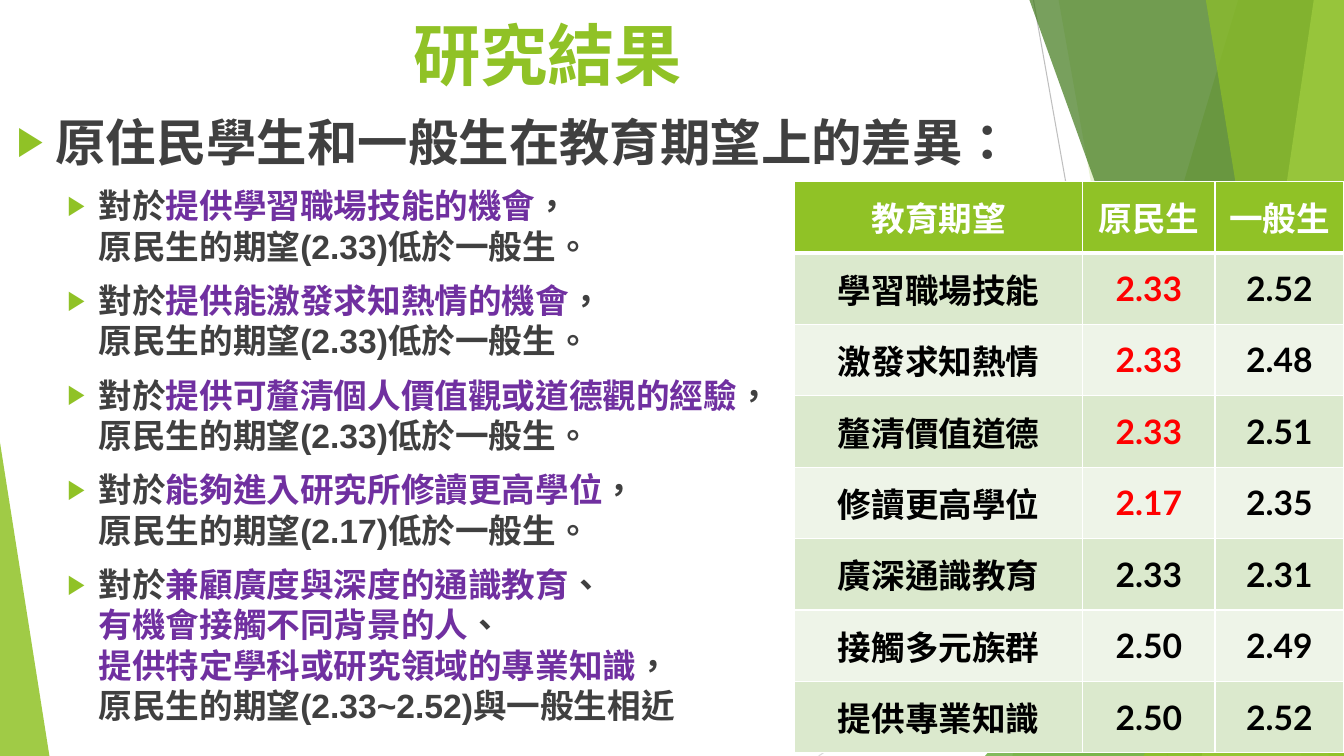
from lxml import etree
from pptx import Presentation, util as u
from pptx.dml.color import RGBColor
from pptx.enum import lang, shapes, text
from pptx.oxml.ns import qn

GREEN, DARK, PURPLE, WHITE = "90C226", "404040", "7030A0", "FFFFFF"


def add_xml(parent, tag, **attributes):
    return etree.SubElement(parent, qn(tag), attributes)


def style_run(run, size, latin, color):
    font = run.font
    font.size, font.bold, font.name = u.Pt(size), True, latin
    font.color.rgb = RGBColor.from_string(color)
    font.language_id = lang.MSO_LANGUAGE_ID.TRADITIONAL_CHINESE
    add_xml(font._element, "a:ea", typeface="Noto Sans CJK SC")


prs = Presentation()
prs.slide_width, prs.slide_height = u.Inches(13.33), u.Inches(7.5)
slide = prs.slides.add_slide(prs.slide_layouts[5])

# Thin diagonal lines behind the facets
for x1, y1, x2, y2, color in [(10.25, 0, 11.58, 7.5, "BFBFBF"),
                              (13.33, 4.03, 8.12, 7.5, "D9D9D9")]:
    diagonal = slide.shapes.add_connector(
        shapes.MSO_CONNECTOR.STRAIGHT,
        u.Inches(x1), u.Inches(y1), u.Inches(x2), u.Inches(y2))
    diagonal.line.color.rgb = RGBColor.from_string(color)
    diagonal.line.width = u.Pt(0.75)
    add_xml(diagonal._element.spPr, "a:effectLst")

# Green facets: bands give top and bottom x of their left edge,
# triangles give left, top, width, height and the tip position
facets = [
    ((12.28, 10.04), GREEN, 30),
    ((10.5, 11.83), GREEN, 20),
    ((9.77, 3.33, 3.56, 4.17, 1), "54A021", 72),
    ((10.21, 12.91), "3F7819", 70),
    ((13.03, 11.92), "C0E474", 70),
    ((11.96, 13.18), GREEN, 65),
    ((11.34, 3.93, 1.99, 3.57, 1), GREEN, 80),
    ((0, 4.39, 0.49, 3.11, 0), GREEN, 85),
]
for geometry, color, opacity in facets:
    if len(geometry) == 2:
        top_x, bottom_x = map(u.Inches, geometry)
        band = slide.shapes.build_freeform(top_x, 0)
        band.add_line_segments([(prs.slide_width, 0),
                                (prs.slide_width, prs.slide_height),
                                (bottom_x, prs.slide_height)], close=True)
        facet = band.convert_to_shape()
    else:
        *box, tip = geometry
        facet = slide.shapes.add_shape(
            shapes.MSO_SHAPE.ISOSCELES_TRIANGLE, *map(u.Inches, box))
        facet.adjustments[0] = tip
    facet.shadow.inherit = False
    facet.line.fill.background()
    facet.fill.solid()
    facet.fill.fore_color.rgb = RGBColor.from_string(color)
    tint = facet._element.spPr.find(".//" + qn("a:srgbClr"))
    add_xml(tint, "a:alpha", val=str(opacity * 1000))

# Title
title = slide.shapes.title
title.left, title.top = u.Inches(0.73), u.Inches(0.03)
title.width, title.height = u.Inches(9.4), u.Inches(1)
title.text_frame.text = "研究結果"
title.text_frame.vertical_anchor = text.MSO_ANCHOR.MIDDLE
title.text_frame.paragraphs[0].alignment = text.PP_ALIGN.CENTER
style_run(title.text_frame.paragraphs[0].runs[0], 48, "Noto Sans CJK SC", GREEN)

# Table of expectations
scores = [
    ("教育期望", "原民生", "一般生"),
    ("學習職場技能", "2.33", "2.52"),
    ("激發求知熱情", "2.33", "2.48"),
    ("釐清價值道德", "2.33", "2.51"),
    ("修讀更高學位", "2.17", "2.35"),
    ("廣深通識教育", "2.33", "2.31"),
    ("接觸多元族群", "2.50", "2.49"),
    ("提供專業知識", "2.50", "2.52"),
]
score_table = slide.shapes.add_table(
    len(scores), 3, u.Inches(7.88), u.Inches(1.8),
    u.Inches(5.45), u.Inches(5.67)).table
for column, width in zip(score_table.columns, (2.86, 1.31, 1.28)):
    column.width = u.Inches(width)
for r, row in enumerate(scores):
    row_fill = GREEN if r == 0 else ("EEF4E8", "DBE9CD")[r % 2]
    for c, value in enumerate(row):
        cell = score_table.cell(r, c)
        cell.text_frame.text = value
        cell.vertical_anchor = text.MSO_ANCHOR.MIDDLE
        lower_score = c == 1 and 1 <= r <= 4
        color = WHITE if r == 0 else "FF0000" if lower_score else "000000"
        paragraph = cell.text_frame.paragraphs[0]
        paragraph.alignment = text.PP_ALIGN.CENTER
        style_run(paragraph.runs[0], 24, "Lato", color)
        # Borders come before the fill in the cell properties
        props = cell._tc.get_or_add_tcPr()
        for side in "LRTB":
            header_rule = (r, side) in ((0, "B"), (1, "T"))
            border = add_xml(props, f"a:ln{side}",
                             w=str(u.Pt(3 if header_rule else 1)))
            add_xml(add_xml(border, "a:solidFill"), "a:srgbClr", val=WHITE)
        cell.fill.solid()
        cell.fill.fore_color.rgb = RGBColor.from_string(row_fill)

# Findings: each line is dark lead, purple emphasis, dark ending
findings = [
    [("原住民學生和一般生在教育期望上的差異：", "", "")],
    [("對於", "提供學習職場技能的機會", "，"),
     ("原民生的期望(2.33)低於一般生。", "", "")],
    [("對於", "提供能激發求知熱情的機會", "，"),
     ("原民生的期望(2.33)低於一般生。", "", "")],
    [("對於", "提供可釐清個人價值觀或道德觀的經驗", "，"),
     ("原民生的期望(2.33)低於一般生。", "", "")],
    [("對於", "能夠進入研究所修讀更高學位", "，"),
     ("原民生的期望(2.17)低於一般生。", "", "")],
    [("對於", "兼顧廣度與深度的通識教育", "、"),
     ("", "有機會接觸不同背景的人", "、"),
     ("", "提供特定學科或研究領域的專業知識", "，"),
     ("原民生的期望(2.33~2.52)與一般生相近", "", "")],
]
body = slide.shapes.add_textbox(
    u.Inches(0.07), u.Inches(1.05), u.Inches(9.89), u.Inches(6.24)).text_frame
body.word_wrap = True
for i, lines in enumerate(findings):
    paragraph = body.add_paragraph() if i else body.paragraphs[0]
    level, size, margin, hanging = (1, 24, 0.81, 0.31) if i else (0, 36, 0.38, 0.38)
    paragraph.level = level
    paragraph.space_before = u.Pt(10)
    paragraph.line_spacing = u.Pt(size * 1.2)
    props = paragraph._p.get_or_add_pPr()
    props.set("marL", str(u.Inches(margin)))
    props.set("indent", str(-u.Inches(hanging)))
    add_xml(add_xml(props, "a:buClr"), "a:srgbClr", val=GREEN)
    add_xml(props, "a:buSzPct", val="80000")
    add_xml(props, "a:buFont", typeface="Arial")
    add_xml(props, "a:buChar", char="▶")
    for n, line in enumerate(lines):
        if n:
            paragraph.add_line_break()
        for phrase, color in zip(line, (DARK, PURPLE, DARK)):
            if phrase:
                run = paragraph.add_run()
                run.text = phrase
                style_run(run, size, "Arial", color)

prs.save("out.pptx")
